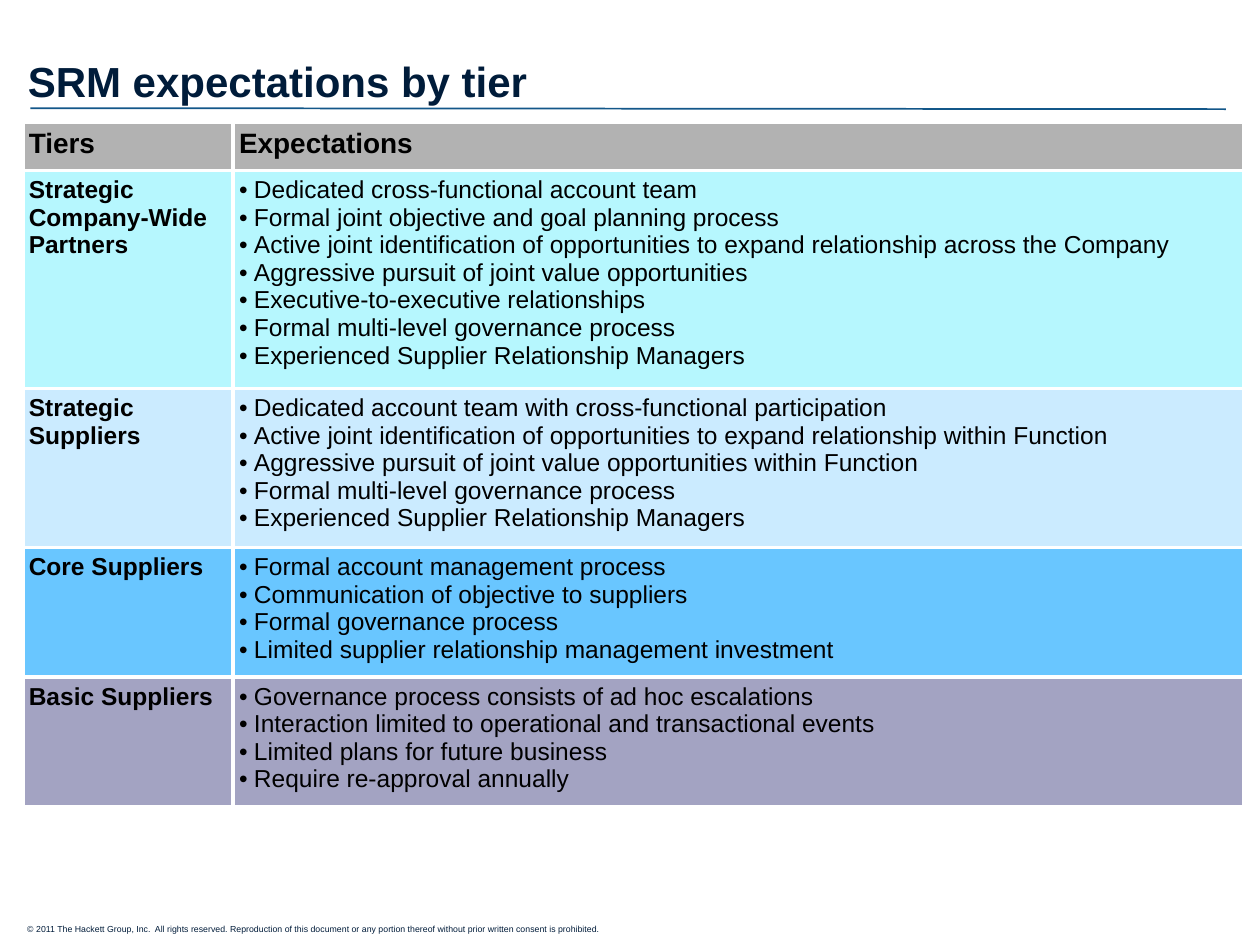
from lxml import etree
from pptx import Presentation
from pptx import util as u
from pptx.dml.color import RGBColor
from pptx.enum import shapes, text
from pptx.oxml.ns import qn

NAVY, BLACK, WHITE = "001C3A", "000000", "FFFFFF"
HEADER_FILL = "B2B2B2"
LINE_HEIGHT, CELL_PADDING = 0.55, 0.28  # cm

TIERS = [
    ("Strategic Company-Wide Partners", "B6F7FE", [
        "Dedicated cross-functional account team",
        "Formal joint objective and goal planning process",
        "Active joint identification of opportunities to expand relationship across the Company",
        "Aggressive pursuit of joint value opportunities",
        "Executive-to-executive relationships",
        "Formal multi-level governance process",
        "Experienced Supplier Relationship Managers",
    ]),
    ("Strategic Suppliers", "CBEBFF", [
        "Dedicated account team with cross-functional participation",
        "Active joint identification of opportunities to expand relationship within Function",
        "Aggressive pursuit of joint value opportunities within Function",
        "Formal multi-level governance process",
        "Experienced Supplier Relationship Managers",
    ]),
    ("Core Suppliers", "69C6FF", [
        "Formal account management process",
        "Communication of objective to suppliers",
        "Formal governance process",
        "Limited supplier relationship management investment",
    ]),
    ("Basic Suppliers", "A3A3C2", [
        "Governance process consists of ad hoc escalations",
        "Interaction limited to operational and transactional events",
        "Limited plans for future business",
        "Require re-approval annually",
    ]),
]


def color(hex_value):
    return RGBColor.from_string(hex_value)


def style(paragraph, size, hex_value, bold=False):
    for run in paragraph.runs:
        run.font.name = "Arial"
        run.font.size = u.Pt(size)
        run.font.bold = bold
        run.font.color.rgb = color(hex_value)


def add_bullet(paragraph):
    paragraph.level = 1
    props = paragraph._p.get_or_add_pPr()
    props.set("marL", str(u.Cm(0.3)))
    props.set("indent", str(-u.Cm(0.3)))
    etree.SubElement(props, qn("a:buFont")).set("typeface", "Arial")
    etree.SubElement(props, qn("a:buChar")).set("char", "•")


def add_borders(cell):
    props = cell._tc.get_or_add_tcPr()
    for side in ("lnL", "lnR", "lnT", "lnB"):
        border = etree.SubElement(props, qn(f"a:{side}"), w=str(u.Pt(2.25)))
        fill = etree.SubElement(border, qn("a:solidFill"))
        etree.SubElement(fill, qn("a:srgbClr"), val=WHITE)


def fill_cell(cell, lines, fill, size, bold=False, bulleted=False):
    add_borders(cell)
    cell.fill.solid()
    cell.fill.fore_color.rgb = color(fill)
    cell.margin_left = cell.margin_right = u.Cm(0.12)
    cell.margin_top = cell.margin_bottom = u.Cm(0.12)
    cell.text_frame.text = "\n".join(lines)
    for paragraph in cell.text_frame.paragraphs:
        if bulleted:
            add_bullet(paragraph)
        style(paragraph, size, BLACK, bold)


def format_title(slide):
    title = slide.shapes.title
    title.left, title.top = u.Cm(0.36), u.Cm(0.79)
    title.width, title.height = u.Cm(24.61), u.Cm(1.45)
    frame = title.text_frame
    frame.text = "SRM expectations by tier"
    frame.vertical_anchor = text.MSO_ANCHOR.BOTTOM
    frame.margin_left = frame.margin_right = u.Cm(0.2)
    frame.margin_top = frame.margin_bottom = u.Cm(0.1)
    heading = frame.paragraphs[0]
    heading.alignment = text.PP_ALIGN.LEFT
    heading.line_spacing = 0.9
    style(heading, 24, NAVY, bold=True)


def add_title_rule(slide):
    rule = slide.shapes.add_connector(
        shapes.MSO_CONNECTOR.STRAIGHT, u.Cm(0.61), u.Cm(2.18), u.Cm(24.71), u.Cm(2.2))
    rule.line.color.rgb = color("135789")
    rule.line.width = u.Pt(1)
    etree.SubElement(rule._element.spPr, qn("a:effectLst"))


def add_copyright(slide):
    box = slide.shapes.add_textbox(u.Cm(0.3), u.Cm(18.49), u.Cm(15.6), u.Cm(0.46))
    box.text_frame.word_wrap = True
    box.text_frame.text = (
        "© 2011 The Hackett Group, Inc.  All rights reserved. Reproduction of this document "
        "or any portion thereof without prior written consent is prohibited.")
    style(box.text_frame.paragraphs[0], 5, NAVY)


def add_tier_table(slide):
    heights = [0.98] + [len(items) * LINE_HEIGHT + CELL_PADDING for _, _, items in TIERS]
    widths = [4.24, 20.37]
    table = slide.shapes.add_table(
        len(heights), len(widths), u.Cm(0.46), u.Cm(2.46),
        u.Cm(sum(widths)), u.Cm(sum(heights))).table
    for column, width in zip(table.columns, widths):
        column.width = u.Cm(width)
    for row, height in zip(table.rows, heights):
        row.height = u.Cm(height)
    for col, heading in enumerate(("Tiers", "Expectations")):
        fill_cell(table.cell(0, col), [heading], HEADER_FILL, 16, bold=True)
    for row, (tier, fill, expectations) in enumerate(TIERS, start=1):
        fill_cell(table.cell(row, 0), [tier], fill, 14, bold=True)
        fill_cell(table.cell(row, 1), expectations, fill, 14, bulleted=True)


def main():
    deck = Presentation()
    deck.slide_width, deck.slide_height = u.Cm(25.4), u.Cm(19.05)
    slide = deck.slides.add_slide(deck.slide_layouts[5])
    add_copyright(slide)
    add_title_rule(slide)
    format_title(slide)
    add_tier_table(slide)
    deck.save("out.pptx")


if __name__ == "__main__":
    main()
